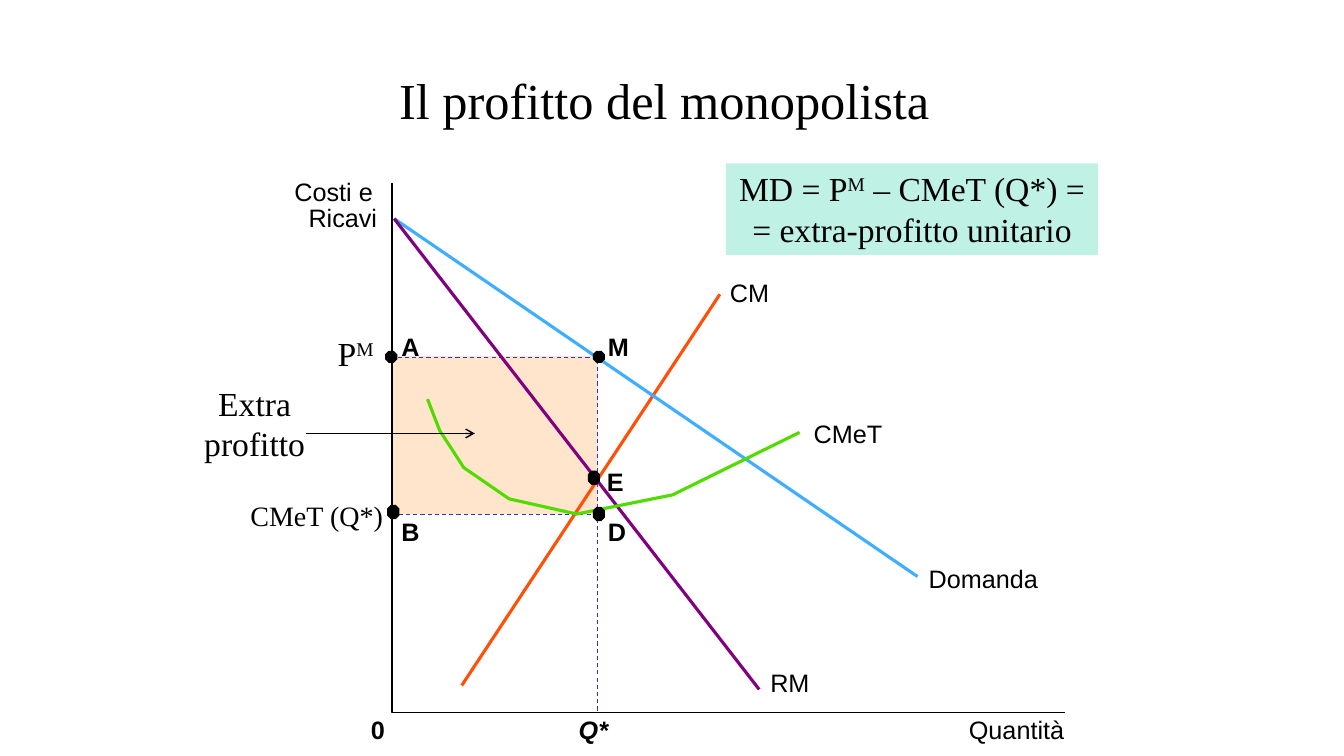
from lxml import etree
from pptx import Presentation
from pptx.dml.color import RGBColor
from pptx.enum.dml import MSO_LINE
from pptx.enum.shapes import MSO_CONNECTOR, MSO_SHAPE
from pptx.enum.text import MSO_ANCHOR, MSO_AUTO_SIZE, PP_ALIGN
from pptx.oxml.ns import qn
from pptx.util import Inches, Pt

BLACK = RGBColor(0, 0, 0)
PEACH = RGBColor(0xFF, 0xCC, 0x99)
TEAL = RGBColor(0x00, 0xCC, 0x99)
INDIGO = RGBColor(0x33, 0x33, 0xCC)
ORANGE = RGBColor(0xFF, 0x50, 0x08)
SKY = RGBColor(0x40, 0xAE, 0xFF)
PURPLE = RGBColor(0x80, 0x00, 0x80)
GREEN = RGBColor(0x51, 0xDC, 0x00)

SERIF, SANS = "Times New Roman", "Arial"
LEFT, CENTER, RIGHT = PP_ALIGN.LEFT, PP_ALIGN.CENTER, PP_ALIGN.RIGHT
DASH = MSO_LINE.DASH
STRAIGHT = MSO_CONNECTOR.STRAIGHT
RECT, OCTAGON = MSO_SHAPE.RECTANGLE, MSO_SHAPE.OCTAGON
MIDDLE, TOP = MSO_ANCHOR.MIDDLE, MSO_ANCHOR.TOP
GROW, FIXED = MSO_AUTO_SIZE.SHAPE_TO_FIT_TEXT, MSO_AUTO_SIZE.NONE


def write(frame, text, font=SANS, size=18, bold=False, italic=False,
          align=LEFT):
    """Fill a text frame; a part between two ^ signs is superscript."""
    for i, row in enumerate(text.split("\n")):
        para = frame.paragraphs[0] if i == 0 else frame.add_paragraph()
        para.alignment = align
        for j, part in enumerate(row.split("^")):
            run = para.add_run()
            run.text = part
            style = run.font
            style.name, style.size = font, Pt(size)
            style.bold, style.italic = bold, italic
            style.color.rgb = BLACK
            if j % 2:
                run._r.get_or_add_rPr().set("baseline", "30000")


class Graph:
    def __init__(self, slide):
        self.slide = slide
        self.shapes = slide.shapes

    def title(self, text, box):
        shape = self.shapes.title
        shape.left, shape.top, shape.width, shape.height = map(Inches, box)
        frame = shape.text_frame
        frame.auto_size = FIXED
        frame.vertical_anchor = MIDDLE
        write(frame, text, font=SERIF, size=36, align=CENTER)

    def label(self, text, box, inset=0, **style):
        frame = self.shapes.add_textbox(*map(Inches, box)).text_frame
        self.fit(frame, inset)
        write(frame, text, **style)

    def fit(self, frame, inset):
        frame.margin_left = frame.margin_right = Inches(inset)
        frame.margin_top = frame.margin_bottom = Inches(inset / 2)
        frame.word_wrap = False
        frame.auto_size = GROW
        frame.vertical_anchor = TOP

    def block(self, kind, box, color, alpha=100):
        shape = self.shapes.add_shape(kind, *map(Inches, box))
        shape.shadow.inherit = False
        shape.line.fill.background()
        shape.fill.solid()
        shape.fill.fore_color.rgb = color
        if alpha < 100:
            tint = shape.fill._xPr.find(".//" + qn("a:srgbClr"))
            etree.SubElement(tint, qn("a:alpha")).set("val", str(alpha * 1000))
        return shape

    def dot(self, x, y, high=0.12):
        self.block(OCTAGON, (x - 0.06, y - high / 2, 0.12, high), BLACK)

    def stroke(self, line, color, width, dash):
        line.color.rgb = color
        line.width = Pt(width)
        if dash:
            line.dash_style = dash

    def line(self, start, end, color, width=2.25, dash=None, arrow=False):
        link = self.shapes.add_connector(STRAIGHT, *map(Inches, start + end))
        self.stroke(link.line, color, width, dash)
        if arrow:
            etree.SubElement(link.line._ln, qn("a:tailEnd")).set("type", "arrow")
        etree.SubElement(link._element.spPr, qn("a:effectLst"))

    def curve(self, points, color, width=2.25, dash=None):
        spots = [(Inches(x), Inches(y)) for x, y in points]
        pen = self.shapes.build_freeform(*spots[0])
        pen.add_line_segments(spots[1:], close=False)
        shape = pen.convert_to_shape()
        shape.shadow.inherit = False
        shape.fill.background()
        self.stroke(shape.line, color, width, dash)


def main():
    deck = Presentation()
    deck.slide_width, deck.slide_height = Inches(13.33), Inches(7.5)
    graph = Graph(deck.slides.add_slide(deck.slide_layouts[5]))
    graph.title("Il profitto del monopolista", (2.34, 0.36, 8.5, 1.25))

    # Profit area, axes and guides
    axis, base, best = 3.89, 7.07, 5.93
    price, cost = 3.55, 5.1
    graph.block(RECT, (axis, 3.53, 2.04, 1.57), PEACH, alpha=50)
    graph.curve([(axis, 1.82), (axis, base), (10.56, base)], BLACK, width=1)
    graph.curve([(best, 7.05), (best, price), (axis, price)], INDIGO,
                width=0.75, dash=DASH)
    graph.line((best, cost), (axis, cost), INDIGO, width=0.75, dash=DASH)

    # Cost, demand and revenue curves
    graph.line((7.14, 2.92), (4.58, 6.8), ORANGE)
    graph.line((3.91, 2.17), (9.1, 5.72), SKY)
    graph.line((3.91, 2.17), (7.53, 6.84), PURPLE)
    graph.curve([(4.24, 3.96), (4.36, 4.27), (4.6, 4.64), (5.05, 4.95),
                 (5.72, 5.1), (6.67, 4.91), (7.93, 4.29)], GREEN)

    graph.dot(3.88, 3.54)
    graph.dot(5.94, 3.54)
    for x, y in [(3.9, 5.08), (5.94, cost), (5.89, 4.74)]:
        graph.dot(x, y, high=0.14)

    for text, x, y, wide in [
        ("Costi e", 2.92, 1.75, 0.78), ("Ricavi", 3.06, 2.01, 0.69),
        ("CM", 7.24, 2.75, 0.39), ("CMeT", 8.07, 4.15, 0.69),
        ("Domanda", 9.21, 5.59, 1.09), ("RM", 7.64, 6.62, 0.39),
        ("Quantità", 9.61, 7.09, 0.95),
    ]:
        graph.label(text, (x, y, wide, 0.3))

    for text, x, y, wide in [
        ("A", 3.98, 3.29, 0.18), ("M", 6.03, 3.29, 0.21),
        ("B", 3.98, 5.12, 0.18), ("D", 6.03, 5.12, 0.18),
        ("E", 6.02, 4.63, 0.17), ("0", 3.68, 7.09, 0.14),
    ]:
        graph.label(text, (x, y, wide, 0.3), bold=True)
    graph.label("Q*", (5.74, 7.09, 0.34, 0.3), bold=True, italic=True)

    graph.label("P^M", (3.25, 3.25, 0.59, 0.5), inset=0.1, font=SERIF, size=24)
    graph.label("CMeT (Q*)", (2.47, 4.95, 1.33, 0.34), font=SERIF, size=20,
                align=RIGHT)
    graph.label("Extra\nprofitto", (1.92, 3.75, 1.21, 0.91), inset=0.1,
                font=SERIF, size=24, align=CENTER)
    graph.line((3.04, 4.3), (4.71, 4.3), BLACK, width=1, arrow=True)

    note = graph.block(RECT, (7.2, 1.62, 3.69, 0.91), TEAL, alpha=25)
    graph.fit(note.text_frame, 0.1)
    write(note.text_frame,
          "MD = P^M^ – CMeT (Q*) =\n= extra-profitto unitario",
          font=SERIF, size=24, align=CENTER)

    deck.save("out.pptx")


if __name__ == "__main__":
    main()
